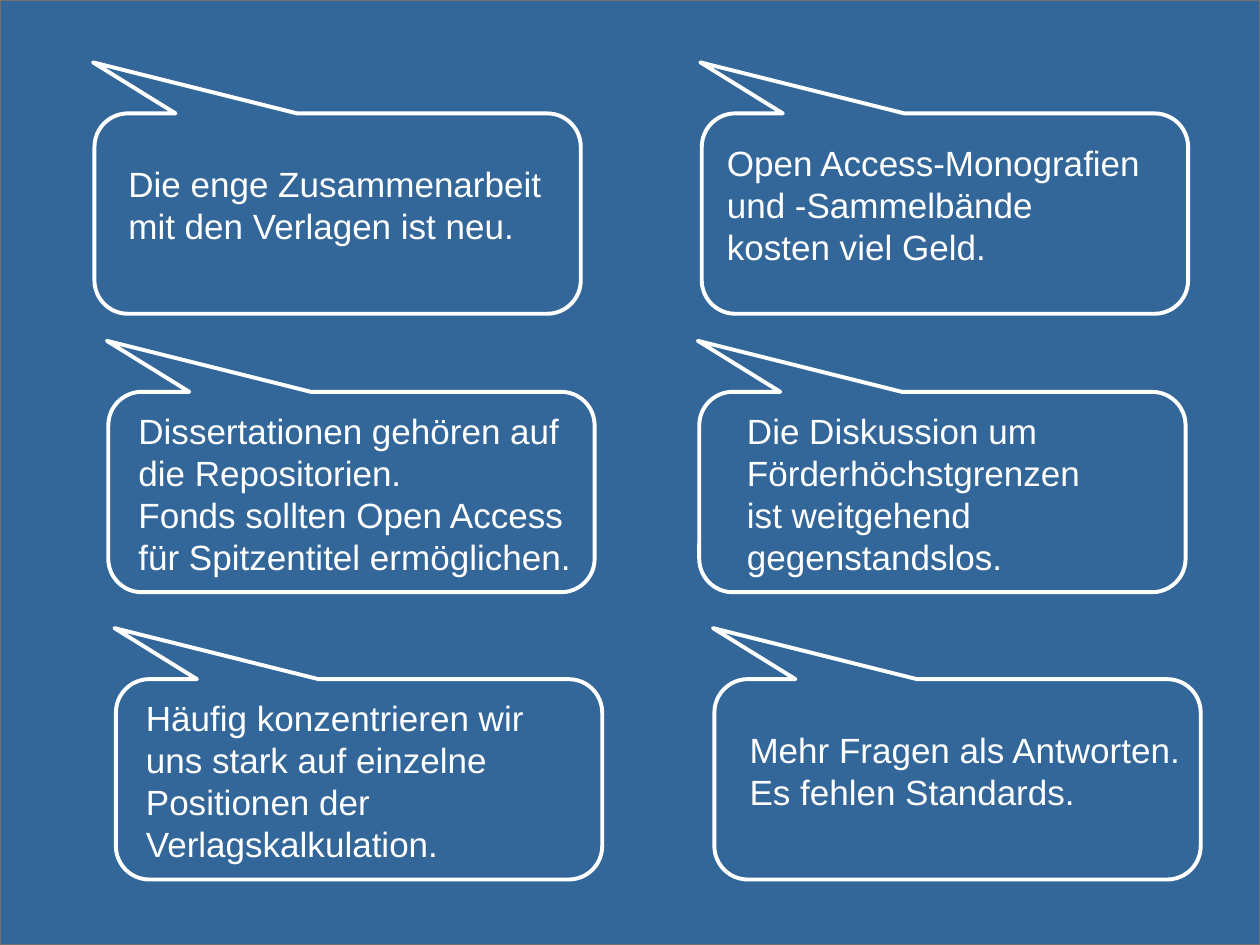
"""Build a slide of six speech bubbles with comments on open access funding."""
from dataclasses import dataclass

from pptx import Presentation, util as u
from pptx.dml.color import RGBColor
from pptx.enum import shapes, text

BLUE, WHITE, GREY = "336699", "FFFFFF", "717171"
BUBBLE_WIDTH, BUBBLE_HEIGHT = 3.86, 1.59
TAIL_AND_CORNER = (-0.503, -0.755, 0.167)
FONT_FORMAT = {"name": "Arial", "size": u.Pt(20)}
FRAME_FORMAT = {
    "word_wrap": True,
    "auto_size": text.MSO_AUTO_SIZE.SHAPE_TO_FIT_TEXT,
    "vertical_anchor": text.MSO_ANCHOR.TOP,
}


@dataclass(frozen=True)
class Comment:
    """Hold a bubble's corner, its text box and its paragraphs."""

    bubble: tuple[float, float]
    box: tuple[float, float, float, float]
    paragraphs: tuple[str, ...]


COMMENTS = (
    Comment((0.75, 0.9), (0.92, 1.24, 3.52, 0.77),
            ("Die enge Zusammenarbeit mit den Verlagen ist neu.",)),
    Comment((5.57, 0.9), (5.67, 1.07, 3.58, 1.31),
            ("Open Access-Monografien und -Sammelbände \vkosten viel Geld.",)),
    Comment((0.86, 3.11), (1, 3.2, 3.68, 1.65),
            ("Dissertationen gehören auf die Repositorien.",
             "Fonds sollten Open Access für Spitzentitel ermöglichen.")),
    Comment((5.55, 3.11), (5.83, 3.2, 3.58, 1.65),
            ("Die Diskussion um Förderhöchstgrenzen \vist weitgehend gegenstandslos.",)),
    Comment((0.92, 5.39), (1.06, 5.48, 3.54, 1.65),
            ("Häufig konzentrieren wir uns stark auf einzelne Positionen der "
             "Verlagskalkulation.",)),
    Comment((5.67, 5.39), (5.85, 5.73, 3.68, 0.77),
            ("Mehr Fragen als Antworten.", "Es fehlen Standards.")),
)


def paint(color_format, value: str) -> None:
    """Apply a hex colour."""
    color_format.rgb = RGBColor.from_string(value)


def apply_format(target, values: dict) -> None:
    """Set each named attribute on the target."""
    for name, value in values.items():
        setattr(target, name, value)


def add_outlined(page, kind, area, line_color: str, line_width: float):
    """Add a preset shape with an outline and no shadow."""
    shape = page.shapes.add_shape(kind, *map(u.Inches, area))
    shape.shadow.inherit = False
    paint(shape.line.color, line_color)
    shape.line.width = u.Pt(line_width)
    return shape


def add_backdrop(page) -> None:
    """Cover the page with the blue panel."""
    backdrop = add_outlined(
        page, shapes.MSO_SHAPE.RECTANGLE, (0, 0, 10, 7.5), GREY, 0.75)
    backdrop.fill.solid()
    paint(backdrop.fill.fore_color, BLUE)


def add_bubble(page, comment: Comment) -> None:
    """Draw the outline of a speech bubble."""
    bubble = add_outlined(
        page, shapes.MSO_SHAPE.ROUNDED_RECTANGULAR_CALLOUT,
        (*comment.bubble, BUBBLE_WIDTH, BUBBLE_HEIGHT), WHITE, 2.25)
    bubble.fill.background()
    for index, value in enumerate(TAIL_AND_CORNER):
        bubble.adjustments[index] = value


def add_comment_text(page, comment: Comment) -> None:
    """Write the paragraphs of a comment."""
    box = page.shapes.add_textbox(*map(u.Inches, comment.box))
    frame = box.text_frame
    apply_format(frame, FRAME_FORMAT)
    for index, wording in enumerate(comment.paragraphs):
        para = frame.add_paragraph() if index else frame.paragraphs[0]
        para.text = wording
        para.line_spacing = u.Pt(24)
        for span in para.runs:
            apply_format(span.font, FONT_FORMAT)
            paint(span.font.color, WHITE)


def main() -> None:
    """Assemble and save the slide."""
    deck = Presentation()
    deck.slide_width, deck.slide_height = u.Inches(10), u.Inches(7.5)
    page = deck.slides.add_slide(deck.slide_layouts[6])
    add_backdrop(page)
    for draw in (add_bubble, add_comment_text):
        for comment in COMMENTS:
            draw(page, comment)
    deck.save("out.pptx")


if __name__ == "__main__":
    main()
